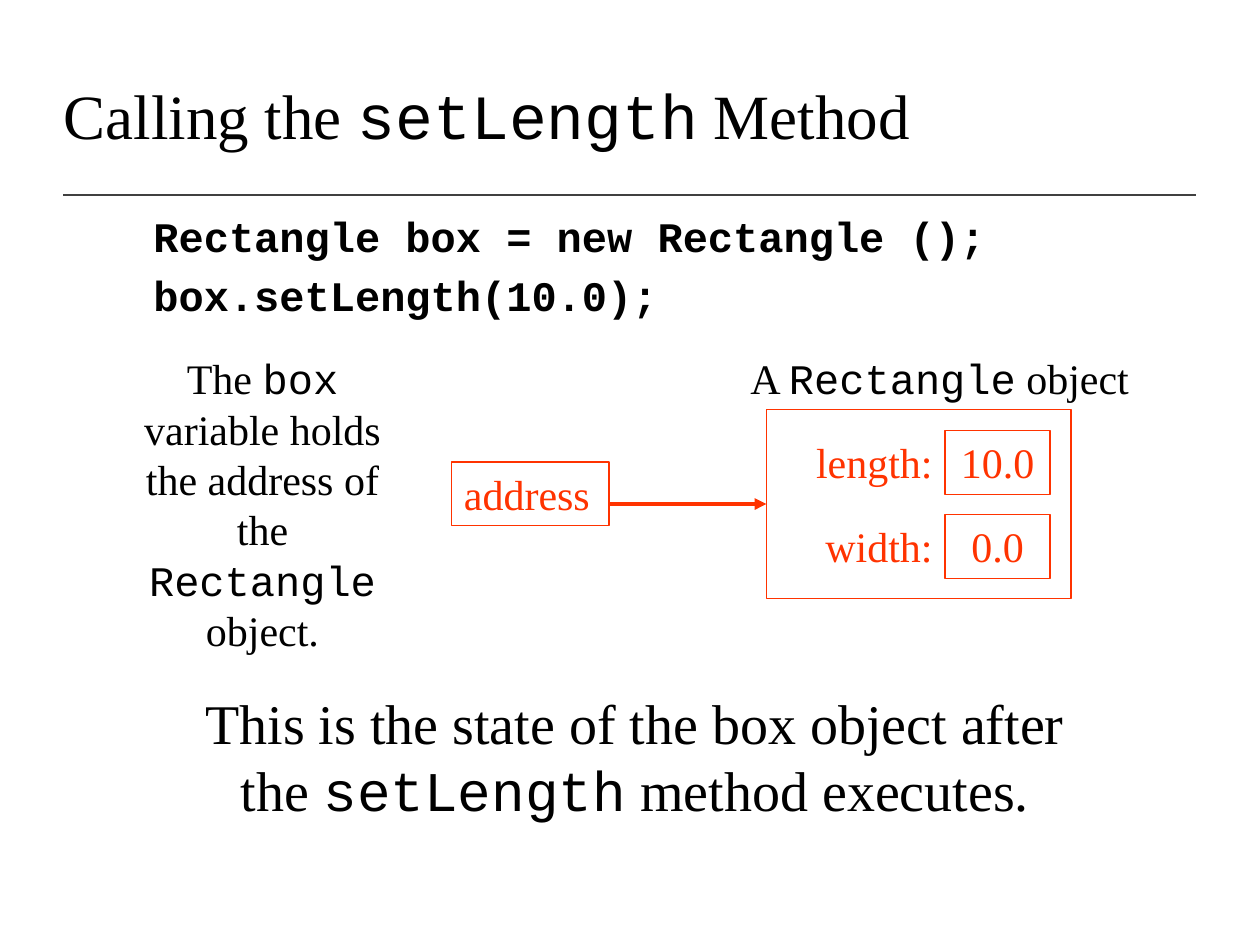
import pptx
import pptx.dml.color
import pptx.enum.shapes
import pptx.enum.text
import pptx.util
from dataclasses import dataclass
from lxml import etree
from pptx.oxml.ns import qn

Pt = pptx.util.Pt
Align = pptx.enum.text.PP_ALIGN
Shapes = pptx.enum.shapes.MSO_SHAPE


@dataclass(frozen=True)
class Theme:
    ink = pptx.dml.color.RGBColor(0x00, 0x00, 0x00)
    accent = pptx.dml.color.RGBColor(0xFF, 0x33, 0x00)
    rule = pptx.dml.color.RGBColor(0x40, 0x40, 0x40)
    serif = "Times New Roman"
    mono = "Courier New"
    title = Pt(36)
    summary = Pt(32)
    body = Pt(24)


theme = Theme()
deck = pptx.Presentation()
deck.slide_width, deck.slide_height = Pt(720), Pt(540)
page = deck.slides.add_slide(deck.slide_layouts[6])


def add_text(place, text, size=theme.body, color=theme.ink, align=Align.CENTER, outlined=False):
    """Add one paragraph; parts between backticks are set in the code font."""
    bounds = [Pt(length) for length in place]
    if outlined:
        box = page.shapes.add_shape(Shapes.RECTANGLE, *bounds)
        box.shadow.inherit = False
        box.fill.background()
        box.line.color.rgb = color
        box.line.width = Pt(0.75)
    else:
        box = page.shapes.add_textbox(*bounds)
    frame = box.text_frame
    frame.word_wrap = True
    frame.vertical_anchor = pptx.enum.text.MSO_ANCHOR.TOP
    para = frame.paragraphs[0]
    para.alignment = align
    para.font.size = size
    para.font.color.rgb = color
    para.font.name = theme.serif
    for index, part in enumerate(text.split("`")):
        if part:
            span = para.add_run()
            span.text = part
            if index % 2:
                span.font.name = theme.mono
    return box


def add_line(start, end, color, width):
    line = page.shapes.add_connector(
        pptx.enum.shapes.MSO_CONNECTOR.STRAIGHT, *[Pt(length) for length in start + end])
    line.line.color.rgb = color
    line.line.width = Pt(width)
    etree.SubElement(line._element.spPr, qn("a:effectLst"))
    return line


# Title and rule
add_line((36, 111.6), (683.3, 111.6), theme.rule, 1)
title = add_text((29.5, 23, 612, 90), "Calling the `setLength` Method", theme.title, align=Align.LEFT)
title.text_frame.vertical_anchor = pptx.enum.text.MSO_ANCHOR.MIDDLE
title.text_frame.paragraphs[0].line_spacing = 0.9

# Code lines
code = page.shapes.add_textbox(Pt(80.6), Pt(120.2), Pt(545), Pt(87))
code.text_frame.word_wrap = True
code.text_frame.text = "Rectangle box = new Rectangle ();\nbox.setLength(10.0);"
for para in code.text_frame.paragraphs:
    para.line_spacing = 0.9
    para.space_before = Pt(7.5)
    para.font.name = theme.mono
    para.font.size = theme.body
    para.font.bold = True
    para.font.color.rgb = theme.ink

# Variable holding the address
add_text((258, 264, 90, 36.5), "address", color=theme.accent, align=Align.LEFT, outlined=True)

# Object with its fields
add_text((438, 234, 174, 108), "", color=theme.accent, outlined=True)
for row, (label, value) in enumerate([("length:", "10.0"), ("width:", "0.0")]):
    top = 246 + 48 * row
    add_text((450, top, 90, 36), label, color=theme.accent, align=Align.RIGHT)
    add_text((540, top, 60, 36.5), value, color=theme.accent, outlined=True)

# Arrow from the variable to the object
arrow = add_line((348, 288), (438, 288), theme.accent, 2.25)
etree.SubElement(arrow.line._get_or_add_ln(), qn("a:tailEnd"), type="triangle")

# Captions
add_text((66, 198, 168, 180), "The `box `variable holds the address of the `Rectangle` object.")
add_text((396, 198, 282, 36), "A `Rectangle` object")
add_text((108, 390, 510, 84),
         "This is the state of the box object after the `setLength` method executes.", theme.summary)

deck.save("out.pptx")
